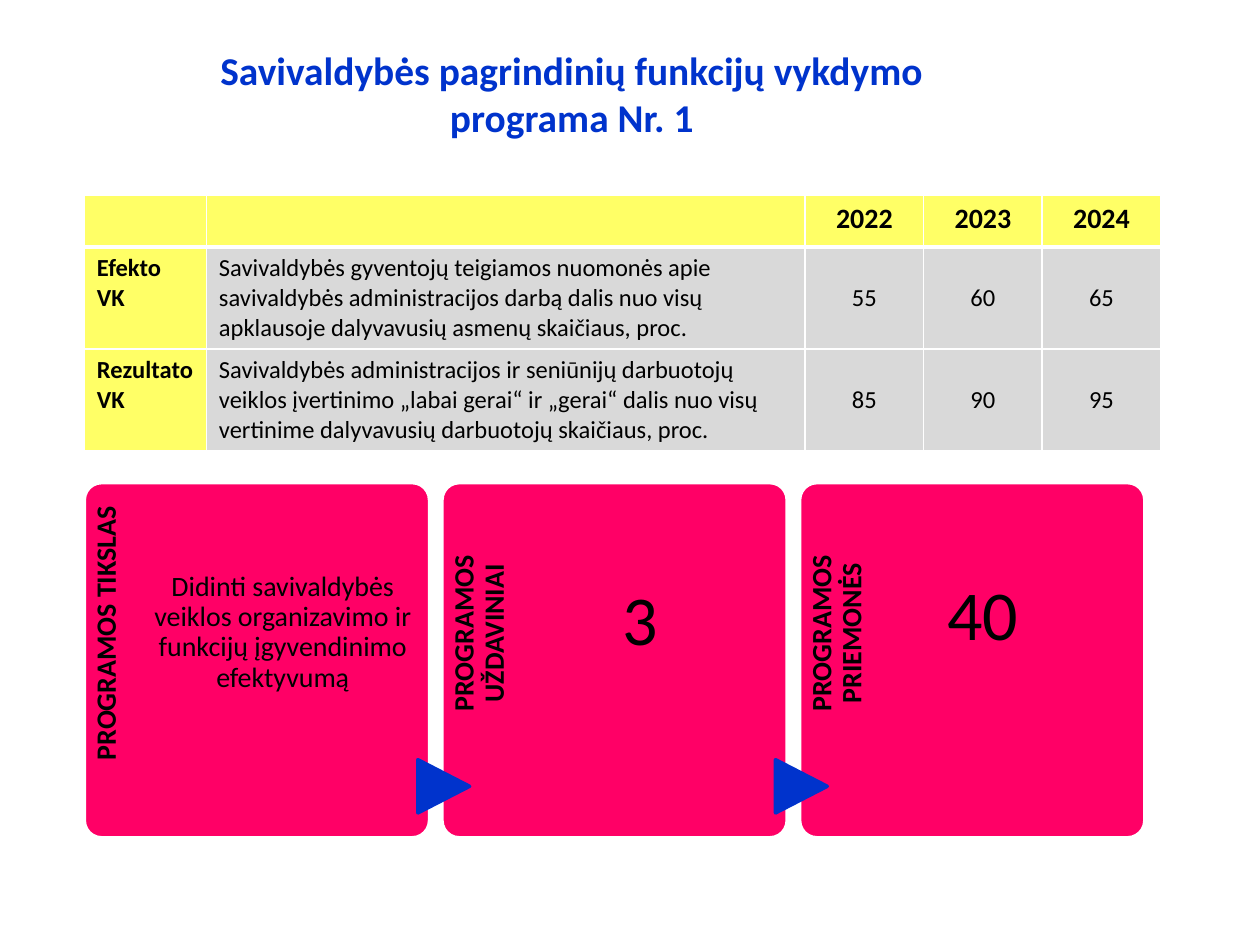
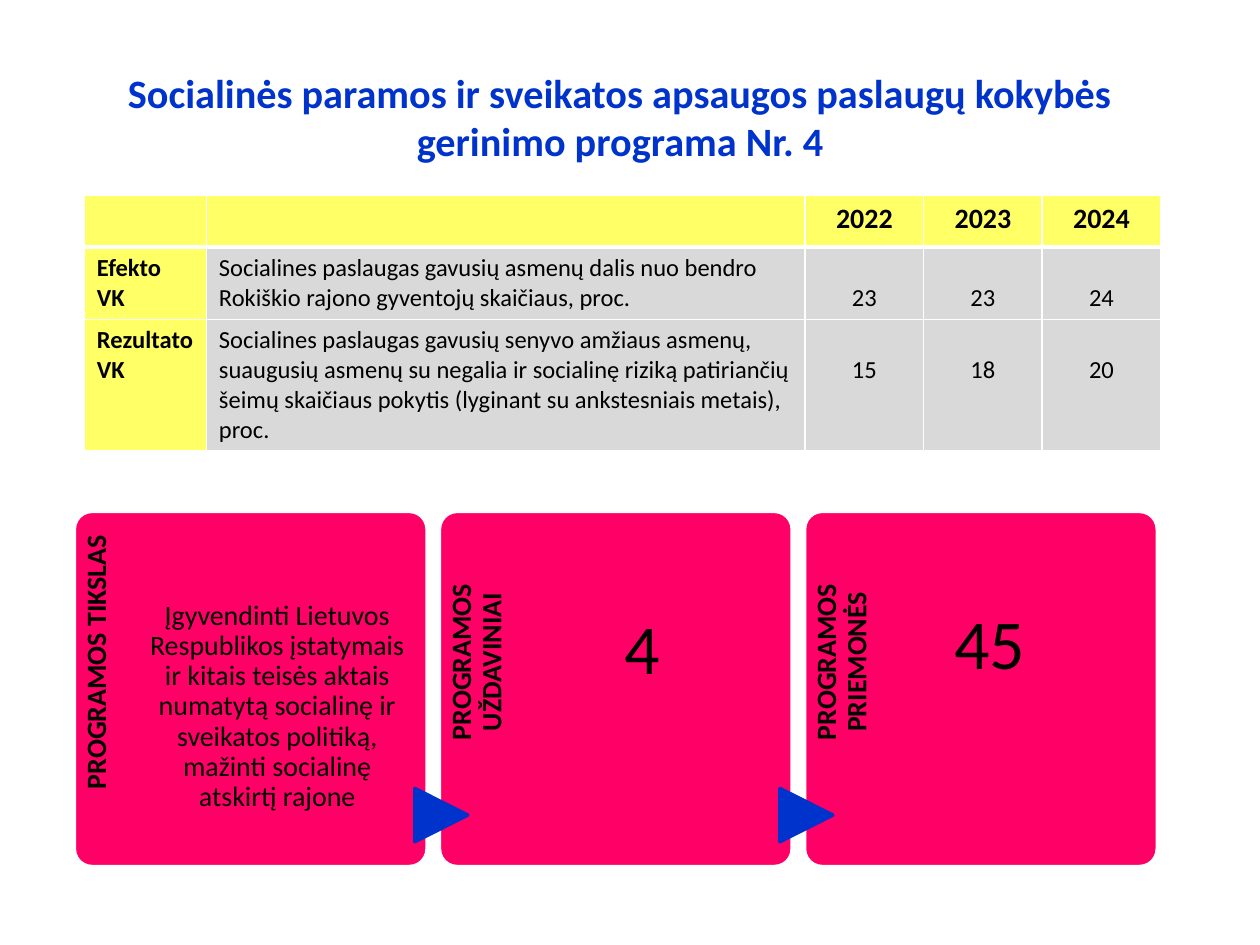
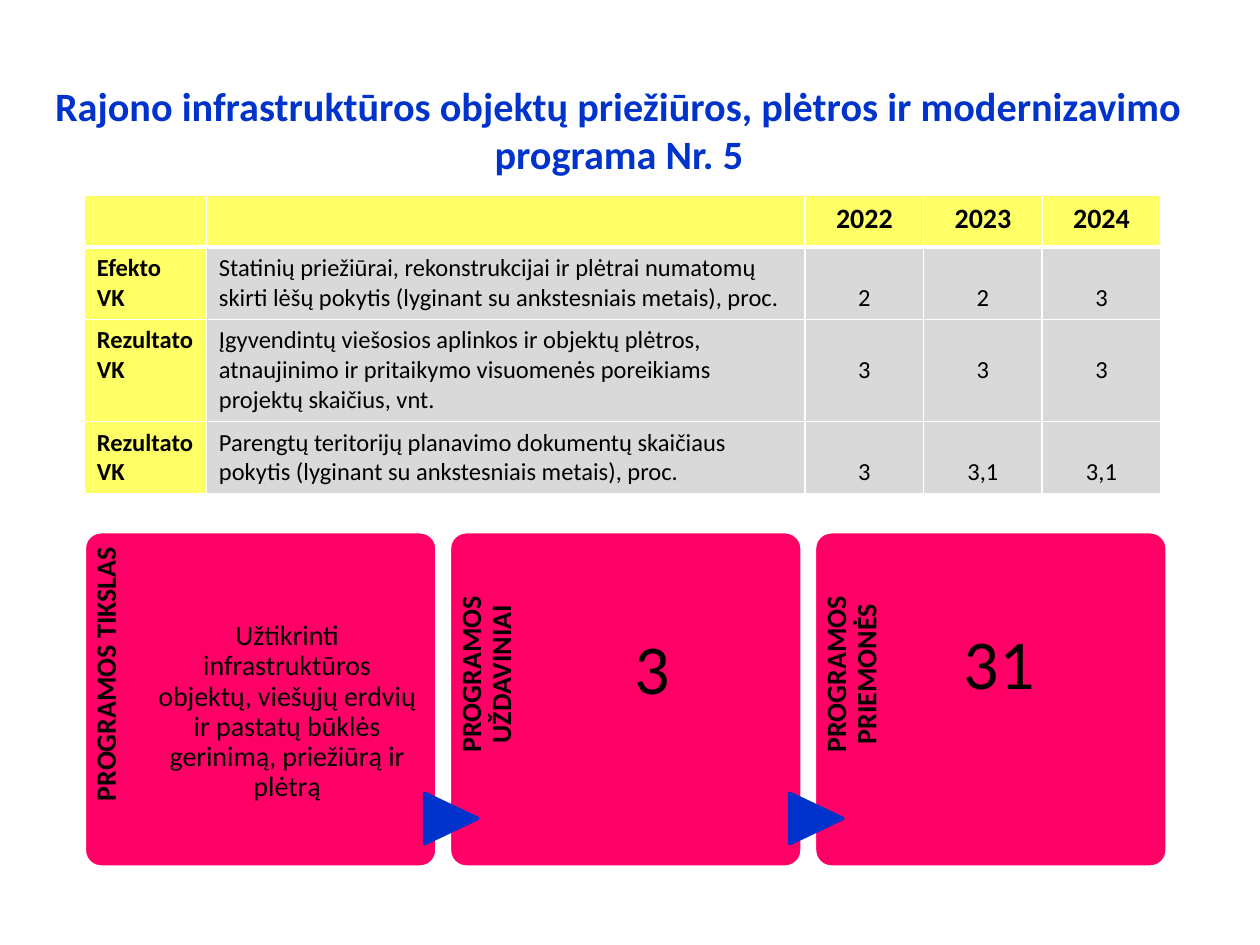
from collections import namedtuple
from dataclasses import dataclass

from lxml.etree import SubElement
from pptx import Presentation
from pptx.dml.color import RGBColor
from pptx.enum.shapes import MSO_SHAPE
from pptx.enum.text import MSO_ANCHOR, MSO_AUTO_SIZE, PP_ALIGN
from pptx.oxml.ns import qn
from pptx.util import Cm, Pt


@dataclass(frozen=True)
class Theme:
    font: str = "Calibri"
    blue: str = "0033CC"
    pink: str = "FF0066"
    yellow: str = "FFFF66"
    grey: str = "D9D9D9"
    white: str = "FFFFFF"
    black: str = "000000"
    head: float = 16
    cell: float = 14
    label: float = 16
    count: float = 40
    thin: float = 1
    thick: float = 3
    edge: float = 2


THEME = Theme()
YEARS = ["2022", "2023", "2024"]
COLS = [2.46, 12.07, 2.39, 2.39, 2.39]
ROW = 1.04
EFFECT, RESULT = "Efekto VK", "Rezultato VK"


class Box(namedtuple("Box", "left top width height")):
    """A rectangle in centimetres."""

    def inner(self, x, y, wide, high):
        """Return the inner box given by shares of this one."""
        return Box(self.left + x * self.width, self.top + y * self.height,
                   wide * self.width, high * self.height)

    def turned(self):
        """Return the box that covers this one after a quarter turn."""
        return Box(self.left + (self.width - self.height) / 2,
                   self.top + (self.height - self.width) / 2,
                   self.height, self.width)

    def cm(self):
        return [Cm(side) for side in self]


def write(frame, text, size, bold=False, color=THEME.black, align=PP_ALIGN.CENTER,
          space=1.0, pads=None, anchor=MSO_ANCHOR.TOP):
    """Put text in a frame; pads are left, top, right and bottom in cm."""
    frame.word_wrap = True
    frame.vertical_anchor = anchor
    if pads:
        (frame.margin_left, frame.margin_top,
         frame.margin_right, frame.margin_bottom) = map(Cm, pads)
    para = frame.paragraphs[0]
    para.alignment, para.line_spacing = align, space
    run = para.add_run()
    run.text = text
    font = run.font
    font.name, font.size, font.bold = THEME.font, Pt(size), bold
    font.color.rgb = RGBColor.from_string(color)


def draw(slide, kind, box, fill, line):
    shape = slide.shapes.add_shape(kind, *box.cm())
    shape.shadow.inherit = False
    shape.fill.solid()
    shape.fill.fore_color.rgb = RGBColor.from_string(fill)
    shape.line.color.rgb = RGBColor.from_string(line)
    shape.line.width = Pt(THEME.edge)
    return shape


def add_title(slide, text, box, size):
    title = slide.shapes.title
    title.left, title.top, title.width, title.height = box.cm()
    title.text_frame.auto_size = MSO_AUTO_SIZE.NONE
    write(title.text_frame, text, size, bold=True, color=THEME.blue,
          pads=(0.2, 0.13, 0.2, 0.13), anchor=MSO_ANCHOR.MIDDLE)


def paint(cell, fill, above, below):
    """Give a cell its white borders and its fill."""
    props = cell._tc.get_or_add_tcPr()
    sides = {"L": THEME.thin, "R": THEME.thin, "T": above, "B": below}
    for side, width in sides.items():
        line = SubElement(props, qn(f"a:ln{side}"), w=str(Pt(width)))
        SubElement(SubElement(line, qn("a:solidFill")), qn("a:srgbClr"), val=THEME.white)
    cell.fill.solid()
    cell.fill.fore_color.rgb = RGBColor.from_string(fill)


def add_grid(slide, left, top, rows):
    """Add the table of yearly values, one row for each measure."""
    lines = [("", "", *YEARS), *rows]
    box = Box(left, top, sum(COLS), ROW * len(lines))
    table = slide.shapes.add_table(len(lines), len(COLS), *box.cm()).table
    for col, width in zip(table.columns, COLS):
        col.width = Cm(width)
    for r, line in enumerate(lines):
        for c, text in enumerate(line):
            cell = table.cell(r, c)
            paint(cell, THEME.yellow if r == 0 or c == 0 else THEME.grey,
                  above=THEME.thick if r == 1 else THEME.thin,
                  below=THEME.thick if r == 0 else THEME.thin)
            if text:
                write(cell.text_frame, text, THEME.cell if r else THEME.head,
                      bold=r == 0 or c == 0,
                      align=PP_ALIGN.CENTER if c > 1 else PP_ALIGN.LEFT,
                      space=2.0 if r and c > 1 else 1.0)


def add_card(slide, box, label, text, **form):
    """Add a card with an upright label; form formats its main text."""
    card = draw(slide, MSO_SHAPE.ROUNDED_RECTANGLE, box, THEME.pink, THEME.white)
    card.adjustments[0] = 0.05
    strip = slide.shapes.add_textbox(*box.inner(0, 0, 0.2, 0.82).turned().cm())
    strip.rotation = 270
    write(strip.text_frame, label, THEME.label, bold=True, space=0.9,
          pads=(0, 0.15, 0.2, 0))
    body = slide.shapes.add_textbox(*box.inner(0.2, 0, 0.75, 1).cm())
    write(body.text_frame, text, space=0.9, **form)


def add_arrow(slide, box):
    """Add an arrow that points into the card in the box."""
    spot = box.inner(-0.07, 0.78, 0.15, 0.15)
    arrow = draw(slide, MSO_SHAPE.FLOWCHART_EXTRACT, spot.turned(), THEME.blue, THEME.blue)
    arrow.rotation = 90


def add_cards(slide, first, goal, tasks, steps):
    """Add three linked cards, the first of them in the given box."""
    cards = [
        ("PROGRAMOS TIKSLAS", goal,
         dict(size=THEME.label, pads=(0, 1.81, 0, 0))),
        ("PROGRAMOS UŽDAVINIAI", tasks,
         dict(size=THEME.count, pads=(0, 2.61, 0, 0))),
        ("PROGRAMOS PRIEMONĖS", steps,
         dict(size=THEME.count, pads=(1.59, 2.41, 0, 0), align=PP_ALIGN.LEFT)),
    ]
    gap = 0.25
    for i, (label, text, form) in enumerate(cards):
        box = first._replace(left=first.left + i * (first.width + gap))
        add_card(slide, box, label, text, **form)
        if i:
            add_arrow(slide, box)


PAGES = [
    dict(
        title=("Savivaldybės pagrindinių funkcijų vykdymo programa Nr. 1",
               Box(2.97, 0.76, 17.12, 2.24), 22.5),
        rows=[
            (EFFECT, "Savivaldybės gyventojų teigiamos nuomonės apie savivaldybės "
             "administracijos darbą dalis nuo visų apklausoje dalyvavusių asmenų "
             "skaičiaus, proc.", "55", "60", "65"),
            (RESULT, "Savivaldybės administracijos ir seniūnijų darbuotojų veiklos "
             "įvertinimo „labai gerai“ ir „gerai“ dalis nuo visų vertinime "
             "dalyvavusių darbuotojų skaičiaus, proc.", "85", "90", "95"),
        ],
        cards=(Box(1.7, 9.73, 6.96, 7.16),
               "Didinti savivaldybės veiklos organizavimo ir funkcijų "
               "įgyvendinimo efektyvumą", "3", "40"),
    ),
    dict(
        title=("Socialinės paramos ir sveikatos apsaugos paslaugų kokybės "
               "gerinimo programa Nr. 4", Box(0.89, 0.76, 23.24, 3.18), 23),
        rows=[
            (EFFECT, "Socialines paslaugas gavusių asmenų dalis nuo bendro Rokiškio "
             "rajono gyventojų skaičiaus, proc.", "23", "23", "24"),
            (RESULT, "Socialines paslaugas gavusių senyvo amžiaus asmenų, suaugusių "
             "asmenų su negalia ir socialinę riziką patiriančių šeimų skaičiaus "
             "pokytis (lyginant su ankstesniais metais), proc.", "15", "18", "20"),
        ],
        cards=(Box(1.5, 10.31, 7.11, 7.16),
               "Įgyvendinti Lietuvos Respublikos įstatymais ir kitais teisės aktais "
               "numatytą socialinę ir sveikatos politiką, mažinti socialinę "
               "atskirtį rajone", "4", "45"),
    ),
    dict(
        title=("Rajono infrastruktūros objektų priežiūros, plėtros ir "
               "modernizavimo programa Nr. 5", Box(0.86, 1.32, 23.24, 2.57), 23),
        rows=[
            (EFFECT, "Statinių priežiūrai, rekonstrukcijai ir plėtrai numatomų skirti "
             "lėšų pokytis (lyginant su ankstesniais metais), proc.", "2", "2", "3"),
            (RESULT, "Įgyvendintų viešosios aplinkos ir objektų plėtros, atnaujinimo "
             "ir pritaikymo visuomenės poreikiams projektų skaičius, vnt.",
             "3", "3", "3"),
            (RESULT, "Parengtų teritorijų planavimo dokumentų skaičiaus pokytis "
             "(lyginant su ankstesniais metais), proc.", "3", "3,1", "3,1"),
        ],
        cards=(Box(1.7, 10.72, 7.11, 6.76),
               "Užtikrinti infrastruktūros objektų, viešųjų erdvių ir pastatų "
               "būklės gerinimą, priežiūrą ir plėtrą", "3", "31"),
    ),
]


def main():
    deck = Presentation()
    deck.slide_width, deck.slide_height = Cm(25.4), Cm(19.05)
    layout = deck.slide_layouts.get_by_name("Title Only")
    for page in PAGES:
        slide = deck.slides.add_slide(layout)
        add_title(slide, *page["title"])
        add_grid(slide, 1.7, 3.94, page["rows"])
        add_cards(slide, *page["cards"])
    deck.save("out.pptx")


if __name__ == "__main__":
    main()
